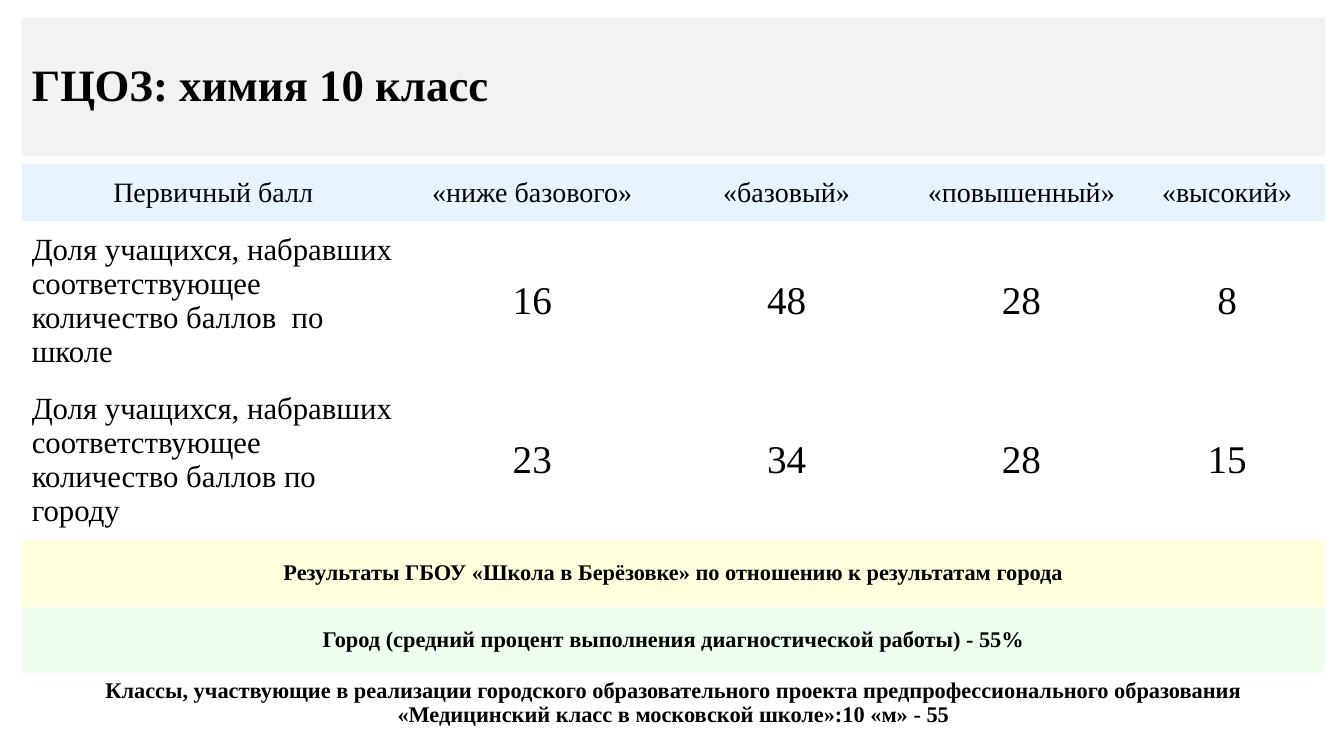
from pptx import Presentation
from pptx.dml.color import RGBColor
from pptx.enum.text import MSO_ANCHOR, PP_ALIGN
from pptx.oxml.ns import qn
from pptx.util import Pt

BLACK = RGBColor(0x00, 0x00, 0x00)
WHITE = RGBColor(0xFF, 0xFF, 0xFF)
GREY = RGBColor(0xF2, 0xF2, 0xF2)
BLUE = RGBColor(0xE7, 0xF3, 0xFF)
YELLOW = RGBColor(0xFF, 0xFF, 0xDD)
GREEN = RGBColor(0xEF, 0xFF, 0xEF)

PLAIN_STYLE = "{2D5ABB26-0587-4C30-8999-92F81FD0307C}"
TITLE_BOX = (15.5, 12.5, 931, 99)
RESULTS_BOX = (15.5, 117, 931, 404.6)
COLUMN_WIDTHS = [273.6, 182.2, 181.2, 154.2, 139.8]
ROW_HEIGHTS = [41.2, 113.8, 113.8, 47.5, 47.5, 40.8]

HEADINGS = ["Первичный балл", "«ниже базового»", "«базовый»", "«повышенный»", "«высокий»"]
SHARES = [
    ("Доля учащихся, набравших соответствующее количество баллов  по школе", 16, 48, 28, 8),
    ("Доля учащихся, набравших соответствующее количество баллов по городу", 23, 34, 28, 15),
]
SUMMARIES = [
    ("Результаты ГБОУ «Школа в Берёзовке» по отношению к результатам города", YELLOW),
    ("Город (средний процент выполнения диагностической работы) - 55%", GREEN),
    ("Классы, участвующие в реализации городского образовательного проекта "
     "предпрофессионального образования «Медицинский класс в московской школе»:"
     "10 «м» - 55", WHITE),
]

HEADING_FONT = {"size": Pt(20), "bold": False}
LABEL_FONT = {"size": Pt(22), "bold": False}
SHARE_FONT = {"size": Pt(28), "bold": False}
SUMMARY_FONT = {"size": Pt(16), "bold": True}
TITLE_FONT = {"size": Pt(32), "bold": True}


def write(frame, wording, font_format, alignment):
    paragraph = frame.paragraphs[0]
    paragraph.alignment = alignment
    run = paragraph.add_run()
    run.text = str(wording)
    for attribute, value in {"name": "Times New Roman", **font_format}.items():
        setattr(run.font, attribute, value)
    run.font.color.rgb = BLACK
    return paragraph


def fill_cell(cell, wording, font_format, background, alignment=PP_ALIGN.CENTER):
    cell.fill.solid()
    cell.fill.fore_color.rgb = background
    cell.vertical_anchor = MSO_ANCHOR.MIDDLE
    write(cell.text_frame, wording, font_format, alignment)


def place_title(slide, box):
    title = slide.shapes.title
    for side, length in zip(("left", "top", "width", "height"), box):
        setattr(title, side, Pt(length))
    title.fill.solid()
    title.fill.fore_color.rgb = GREY
    title.text_frame.vertical_anchor = MSO_ANCHOR.MIDDLE
    paragraph = write(title.text_frame, "ГЦОЗ: химия 10 класс", TITLE_FONT, PP_ALIGN.LEFT)
    paragraph.line_spacing = 0.9


def place_results(slide, box):
    results_frame = slide.shapes.add_table(
        len(ROW_HEIGHTS), len(COLUMN_WIDTHS), *map(Pt, box))
    for style in results_frame.element.iter(qn("a:tableStyleId")):
        style.text = PLAIN_STYLE
    results = results_frame.table
    results.first_row = False
    results.horz_banding = False
    for column, width in zip(results.columns, COLUMN_WIDTHS):
        column.width = Pt(width)
    for row, height in zip(results.rows, ROW_HEIGHTS):
        row.height = Pt(height)

    for column, heading in enumerate(HEADINGS):
        fill_cell(results.cell(0, column), heading, HEADING_FONT, BLUE)
    for row, (label, *shares) in enumerate(SHARES, start=1):
        fill_cell(results.cell(row, 0), label, LABEL_FONT, WHITE, PP_ALIGN.LEFT)
        for column, share in enumerate(shares, start=1):
            fill_cell(results.cell(row, column), share, SHARE_FONT, WHITE)
    for row, (summary, background) in enumerate(SUMMARIES, start=1 + len(SHARES)):
        band = results.cell(row, 0)
        band.merge(results.cell(row, len(COLUMN_WIDTHS) - 1))
        fill_cell(band, summary, SUMMARY_FONT, background)


def main():
    presentation = Presentation()
    presentation.slide_width = Pt(960)
    presentation.slide_height = Pt(540)
    slide = presentation.slides.add_slide(presentation.slide_layouts[5])
    place_title(slide, TITLE_BOX)
    place_results(slide, RESULTS_BOX)
    presentation.save("out.pptx")


if __name__ == "__main__":
    main()
